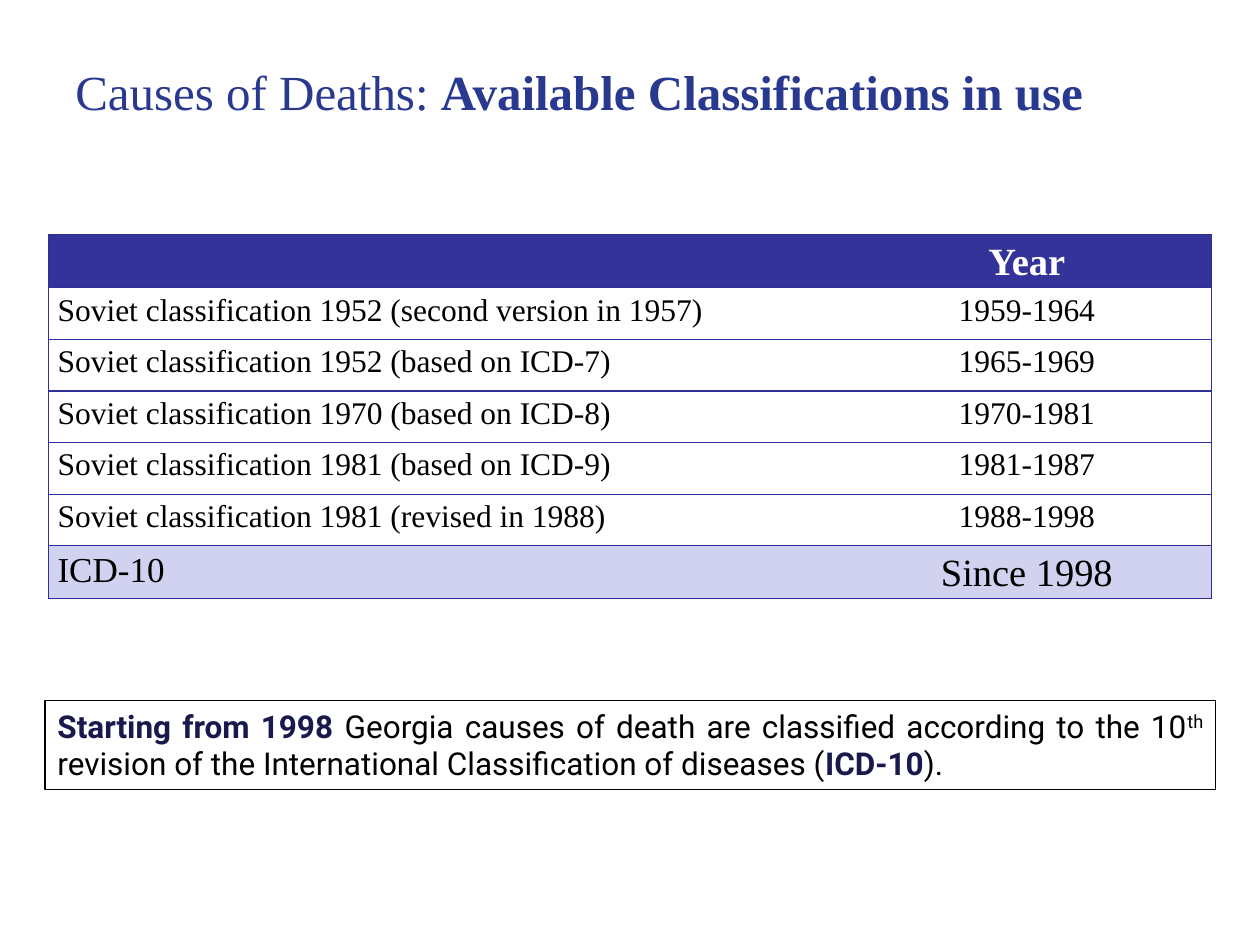
from lxml import etree
from pptx import Presentation
from pptx.dml.color import RGBColor
from pptx.enum.shapes import MSO_SHAPE
from pptx.enum.text import MSO_ANCHOR, PP_ALIGN
from pptx.oxml.ns import qn
from pptx.util import Cm, Pt

RECTANGLE = MSO_SHAPE.RECTANGLE
MIDDLE = MSO_ANCHOR.MIDDLE
LEFT, CENTER, JUSTIFY = PP_ALIGN.LEFT, PP_ALIGN.CENTER, PP_ALIGN.JUSTIFY

TITLE_BLUE = RGBColor(0x2A, 0x39, 0x90)
HEADER_BLUE = RGBColor(0x33, 0x33, 0x99)
BORDER_BLUE = RGBColor(0x2F, 0x2F, 0x98)
PALE_BLUE = RGBColor(0xD1, 0xD1, 0xF0)
NAVY = RGBColor(0x19, 0x19, 0x4D)
BLACK = RGBColor(0, 0, 0)
WHITE = RGBColor(0xFF, 0xFF, 0xFF)

SERIF, SANS = "Times New Roman", "Roboto"
ROW_HEIGHT = Cm(1.04)
COLUMN_WIDTHS = (Cm(16), Cm(7.44))

CLASSIFICATIONS = [
    ("", "Year"),
    ("Soviet classification 1952 (second version in 1957)", "1959-1964"),
    ("Soviet classification 1952 (based on ICD-7)", "1965-1969"),
    ("Soviet classification 1970 (based on ICD-8)", "1970-1981"),
    ("Soviet classification 1981 (based on ICD-9)", "1981-1987"),
    ("Soviet classification 1981 (revised in 1988)", "1988-1998"),
    ("ICD-10", "Since 1998"),
]


def style_font(font, face, size, color, bold=False):
    font.name = face
    font.size = Pt(size)
    font.color.rgb = color
    font.bold = bold


def add_styled_run(paragraph, text, face, size, color, bold=False):
    run = paragraph.add_run()
    run.text = text
    style_font(run.font, face, size, color, bold)
    return run


def add_title(slide):
    title = slide.shapes.add_textbox(Cm(1.27), Cm(0.76), Cm(22.02), Cm(2.16))
    frame = title.text_frame
    frame.word_wrap = True
    frame.vertical_anchor = MIDDLE
    heading = frame.paragraphs[0]
    heading.alignment = LEFT
    add_styled_run(heading, "Causes of Deaths: ", SERIF, 28, TITLE_BLUE)
    add_styled_run(heading, "Available Classifications in use", SERIF, 28, TITLE_BLUE, True)


def set_borders(cell, visible_sides):
    properties = cell._tc.get_or_add_tcPr()
    for side in "LRTB":
        border = etree.SubElement(properties, qn(f"a:ln{side}"), w=str(Pt(0.75)))
        if side in visible_sides:
            fill = etree.SubElement(border, qn("a:solidFill"))
            etree.SubElement(fill, qn("a:srgbClr"), val=str(BORDER_BLUE))
        else:
            etree.SubElement(border, qn("a:noFill"))


def fill_cell(cell, text, alignment, size, color, bold, background):
    cell.margin_left = cell.margin_right = Cm(0.18)
    cell.margin_top = cell.margin_bottom = 0
    if background is None:
        cell.fill.background()
    else:
        cell.fill.solid()
        cell.fill.fore_color.rgb = background
    paragraph = cell.text_frame.paragraphs[0]
    paragraph.text = text
    paragraph.alignment = alignment
    paragraph.line_spacing = 1.15
    paragraph.space_after = Pt(10)
    style_font(paragraph.font, SERIF, size, color, bold)
    for run in paragraph.runs:
        style_font(run.font, SERIF, size, color, bold)


def add_classification_table(slide):
    row_count = len(CLASSIFICATIONS)
    table = slide.shapes.add_table(
        row_count, 2, Cm(0.98), Cm(4.73), sum(COLUMN_WIDTHS), ROW_HEIGHT * row_count
    ).table
    table.horz_banding = False
    for column, width in zip(table.columns, COLUMN_WIDTHS):
        column.width = width
    for row_index, labels in enumerate(CLASSIFICATIONS):
        table.rows[row_index].height = ROW_HEIGHT
        is_header = row_index == 0
        if is_header:
            sizes, color, background = (22, 22), WHITE, HEADER_BLUE
        elif row_index == row_count - 1:
            sizes, color, background = (20, 22), BLACK, PALE_BLUE
        else:
            sizes, color, background = (18, 18), BLACK, None
        for column_index, alignment in enumerate((JUSTIFY, CENTER)):
            cell = table.cell(row_index, column_index)
            set_borders(cell, ("LTB", "RTB")[column_index])
            fill_cell(cell, labels[column_index], alignment, sizes[column_index],
                      color, is_header, background)


def add_note(slide):
    note = slide.shapes.add_shape(RECTANGLE, Cm(0.91), Cm(14.12), Cm(23.6), Cm(1.8))
    note.shadow.inherit = False
    note.fill.background()
    note.line.color.rgb = BLACK
    note.line.width = Pt(0.75)
    frame = note.text_frame
    frame.word_wrap = True
    frame.vertical_anchor = MSO_ANCHOR.TOP
    statement = frame.paragraphs[0]
    statement.alignment = JUSTIFY
    for text, emphasized in (
        ("Starting from 1998 ", True),
        ("Georgia causes of death are classified according to the 10", False),
        ("th", False),
        (" revision of the International Classification of diseases (", False),
        ("ICD-10", True),
        (").", False),
    ):
        run = add_styled_run(statement, text, SANS, 18, NAVY if emphasized else BLACK, emphasized)
        if text == "th":
            run.font._element.set("baseline", "30000")


def main():
    presentation = Presentation()
    presentation.slide_width = Cm(25.4)
    presentation.slide_height = Cm(19.05)
    slide = presentation.slides.add_slide(presentation.slide_layouts[6])
    add_title(slide)
    add_classification_table(slide)
    add_note(slide)
    presentation.save("out.pptx")


if __name__ == "__main__":
    main()
